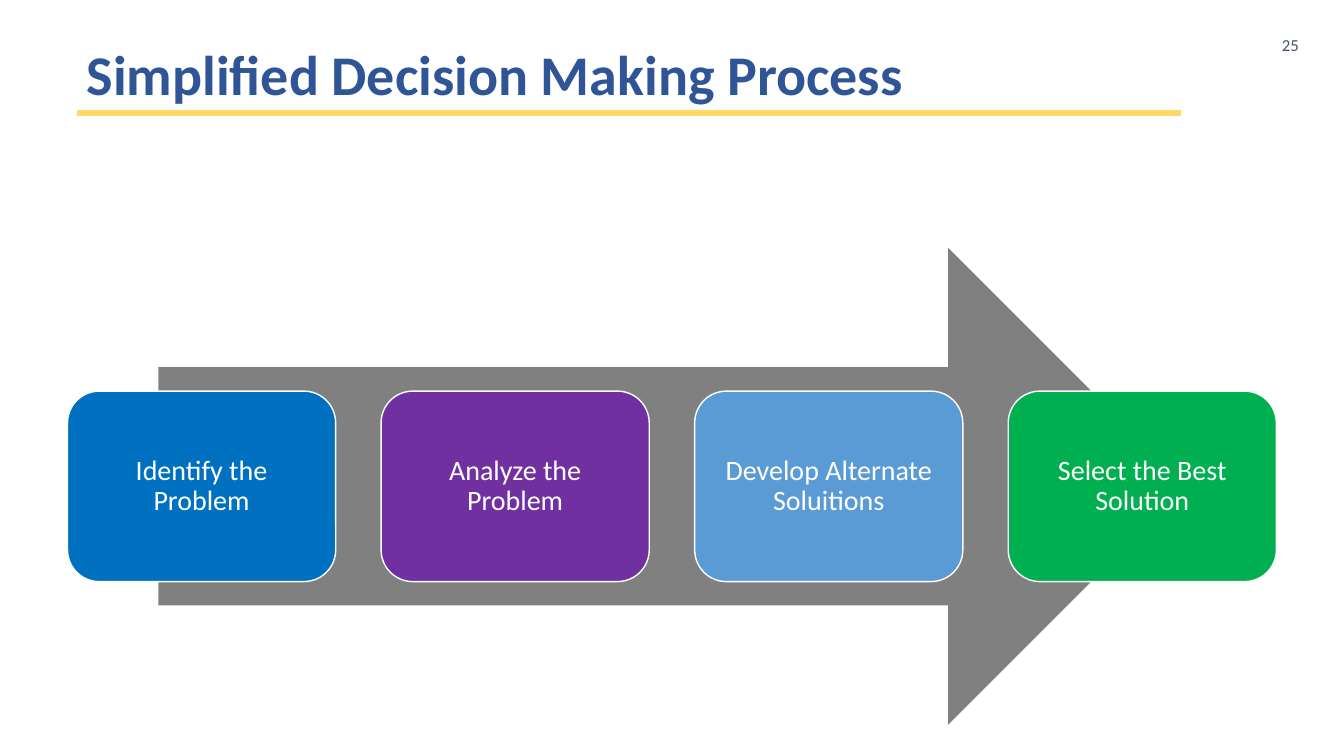
from lxml import etree
from pptx import Presentation
from pptx.dml.color import RGBColor
from pptx.enum.shapes import MSO_CONNECTOR, MSO_SHAPE as SHAPE
from pptx.enum.text import MSO_ANCHOR as ANCHOR, PP_ALIGN as ALIGN
from pptx.oxml.ns import qn
from pptx.util import Inches, Pt


def rgb(color):
    return RGBColor.from_string(color)


def write(sp, text, size, color, align, anchor, bold=False, spacing=1.0):
    tf = sp.text_frame
    tf.word_wrap = True
    tf.vertical_anchor = anchor
    p = tf.paragraphs[0]
    p.alignment = align
    p.line_spacing = spacing
    r = p.add_run()
    r.text = text
    r.font.name = "Calibri"
    r.font.size = Pt(size)
    r.font.bold = bold
    r.font.color.rgb = rgb(color)


prs = Presentation()
prs.slide_width, prs.slide_height = Inches(13.33), Inches(7.5)
slide = prs.slides.add_slide(prs.slide_layouts[5])
shapes = slide.shapes

# Title and page number
title = shapes.title
title.left, title.top = Inches(0.76), Inches(0.24)
title.width, title.height = Inches(11.5), Inches(0.88)
write(title, "Simplified Decision Making Process", 40, "2F5597",
      ALIGN.LEFT, ANCHOR.BOTTOM, bold=True, spacing=0.9)

number = shapes.add_textbox(Inches(12.26), Inches(0.24), Inches(0.72), Inches(0.4))
write(number, "25", 12, "44546A", ALIGN.RIGHT, ANCHOR.MIDDLE)

# Arrow behind the steps
arrow = shapes.add_shape(SHAPE.RIGHT_ARROW, Inches(1.57), Inches(2.46),
                         Inches(10.2), Inches(4.73))
arrow.shadow.inherit = False
arrow.fill.solid()
arrow.fill.fore_color.rgb = rgb("808080")
arrow.line.fill.background()

# Steps
steps = [
    ("Identify the Problem", "0070C0", SHAPE.FLOWCHART_ALTERNATE_PROCESS),
    ("Analyze the Problem", "7030A0", SHAPE.ROUNDED_RECTANGLE),
    ("Develop Alternate Soluitions", "5B9BD5", SHAPE.ROUNDED_RECTANGLE),
    ("Select the Best Solution", "00B050", SHAPE.ROUNDED_RECTANGLE),
]
for i, (text, color, kind) in enumerate(steps):
    step = shapes.add_shape(kind, Inches(0.67 + 3.11 * i), Inches(3.88),
                            Inches(2.66), Inches(1.89))
    step.shadow.inherit = False
    step.fill.solid()
    step.fill.fore_color.rgb = rgb(color)
    step.line.color.rgb = rgb("FFFFFF")
    step.line.width = Pt(1)
    tf = step.text_frame
    tf.margin_left = tf.margin_right = tf.margin_top = tf.margin_bottom = Inches(0.08)
    write(step, text, 20, "FFFFFF", ALIGN.CENTER, ANCHOR.MIDDLE, spacing=0.9)

# Rule under the title
rule = shapes.add_connector(MSO_CONNECTOR.STRAIGHT, Inches(0.76), Inches(1.12),
                            Inches(11.71), Inches(1.12))
rule.line.color.rgb = rgb("FFD966")
rule.line.width = Pt(4)
etree.SubElement(rule.element.spPr, qn("a:effectLst"))

prs.save("out.pptx")
